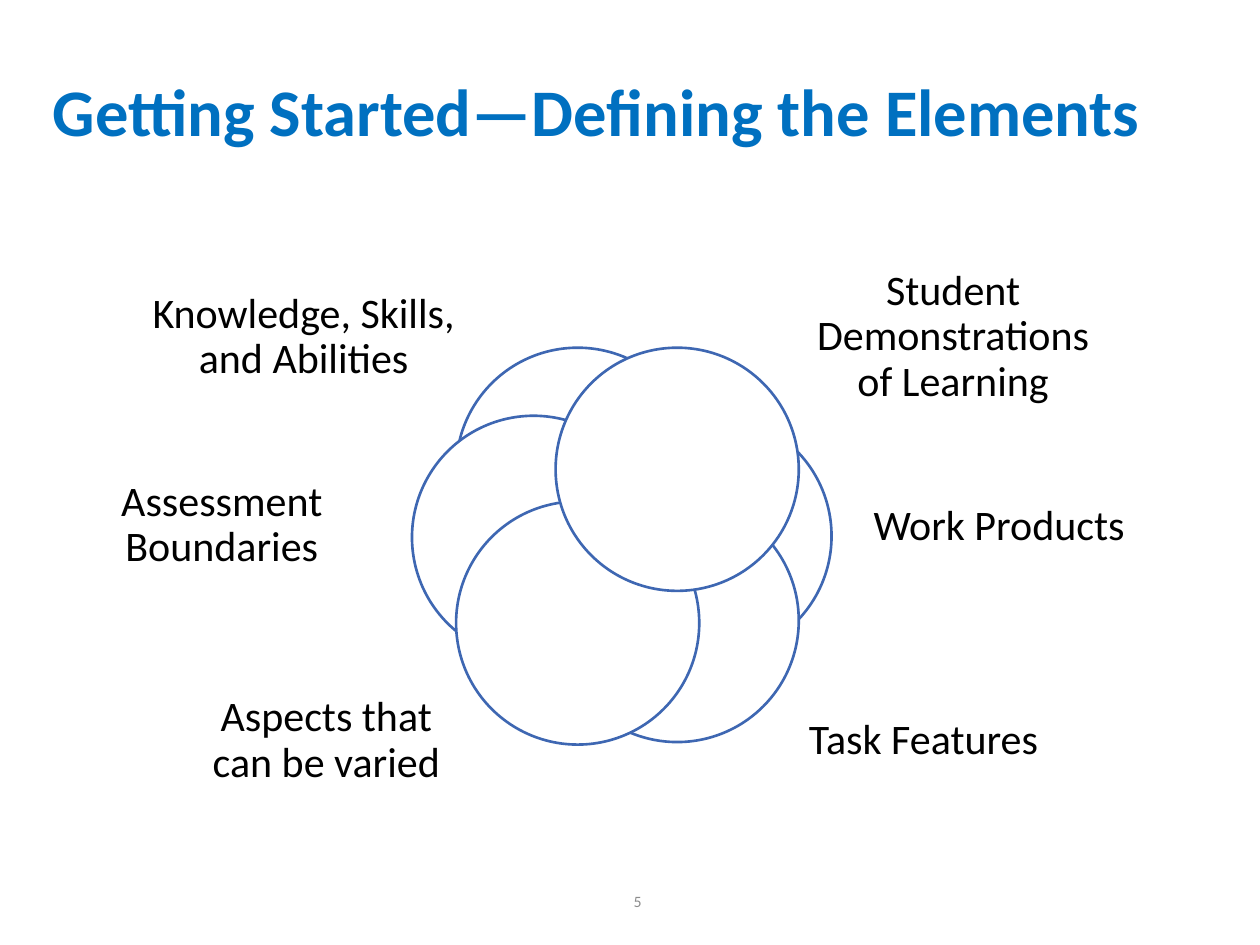
import pptx
import pptx.dml.color
import pptx.enum.shapes
import pptx.enum.text
import pptx.util

COLORS = {"title": "0070C0", "text": "000000", "number": "8C8C8C",
          "circle": "FFFFFF", "outline": "3E67B2"}
FONT = "Calibri"
SLIDE_WIDTH = pptx.util.Inches(10)
SLIDE_HEIGHT = pptx.util.Inches(7.5)
COLUMNS, ROWS = 100, 75
DIAMETER = 19.3
ALIGN = pptx.enum.text.PP_ALIGN

# Left and top of each circle, from back to front
CIRCLES = [(36.2, 27.6), (46.7, 32.9), (44.1, 39.6),
           (32.7, 33), (36.2, 39.8), (44.1, 27.6)]

# Wording, then left, top, width and height
LABELS = [
    ("Student Demonstrations of Learning", (63.3, 20.3, 24.7, 12.9)),
    ("Work Products", (69.3, 34.8, 20, 14)),
    ("Task Features", (63.3, 51.8, 20, 14)),
    ("Aspects that can be varied", (15.9, 51.8, 20, 14)),
    ("Knowledge, Skills, and Abilities", (10, 20.3, 28.2, 12.9)),
    ("Assessment Boundaries", (5.9, 34.7, 23.4, 14)),
]


def color(name):
    return pptx.dml.color.RGBColor.from_string(COLORS[name])


def grid_box(left, top, width, height):
    """Turn columns and rows of the grid into slide lengths."""
    column, row = SLIDE_WIDTH / COLUMNS, SLIDE_HEIGHT / ROWS
    return (round(left * column), round(top * row),
            round(width * column), round(height * row))


def write_text(shape, text, size, color_name, alignment,
               bold=False, line_spacing=0.9):
    frame = shape.text_frame
    frame.text = text
    frame.word_wrap = True
    frame.vertical_anchor = pptx.enum.text.MSO_ANCHOR.MIDDLE
    paragraph = frame.paragraphs[0]
    paragraph.alignment = alignment
    paragraph.line_spacing = line_spacing
    font = paragraph.runs[0].font
    font.name = FONT
    font.size = pptx.util.Pt(size)
    font.bold = bold
    font.color.rgb = color(color_name)


def add_label(slide, text, box):
    """Add centred text in an unfilled outline without insets."""
    left, top, width, height = grid_box(*box)
    right, bottom = left + width, top + height
    builder = slide.shapes.build_freeform(left, top)
    builder.add_line_segments([(right, top), (right, bottom), (left, bottom)])
    shape = builder.convert_to_shape()
    shape.shadow.inherit = False
    shape.fill.background()
    shape.line.fill.background()
    frame = shape.text_frame
    frame.margin_left = frame.margin_right = 0
    frame.margin_top = frame.margin_bottom = 0
    write_text(shape, text, 24, "text", ALIGN.CENTER)


def add_circle(slide, left, top):
    shape = slide.shapes.add_shape(
        pptx.enum.shapes.MSO_SHAPE.OVAL,
        *grid_box(left, top, DIAMETER, DIAMETER))
    shape.shadow.inherit = False
    shape.fill.solid()
    shape.fill.fore_color.rgb = color("circle")
    shape.line.color.rgb = color("outline")
    shape.line.width = pptx.util.Pt(1.5)


def main():
    presentation = pptx.Presentation()
    presentation.slide_width = SLIDE_WIDTH
    presentation.slide_height = SLIDE_HEIGHT
    slide = presentation.slides.add_slide(presentation.slide_layouts[6])

    number = slide.shapes.add_textbox(*grid_box(29.4, 69.5, 22.5, 4))
    write_text(number, "5", 9, "number", ALIGN.RIGHT, line_spacing=1.0)
    title = slide.shapes.add_textbox(*grid_box(3.2, 2.9, 90, 12.5))
    write_text(title, "Getting Started—Defining the Elements",
               38, "title", ALIGN.LEFT, bold=True)
    for (left, top), (text, box) in zip(CIRCLES, LABELS):
        add_circle(slide, left, top)
        add_label(slide, text, box)

    presentation.save("out.pptx")


if __name__ == "__main__":
    main()
